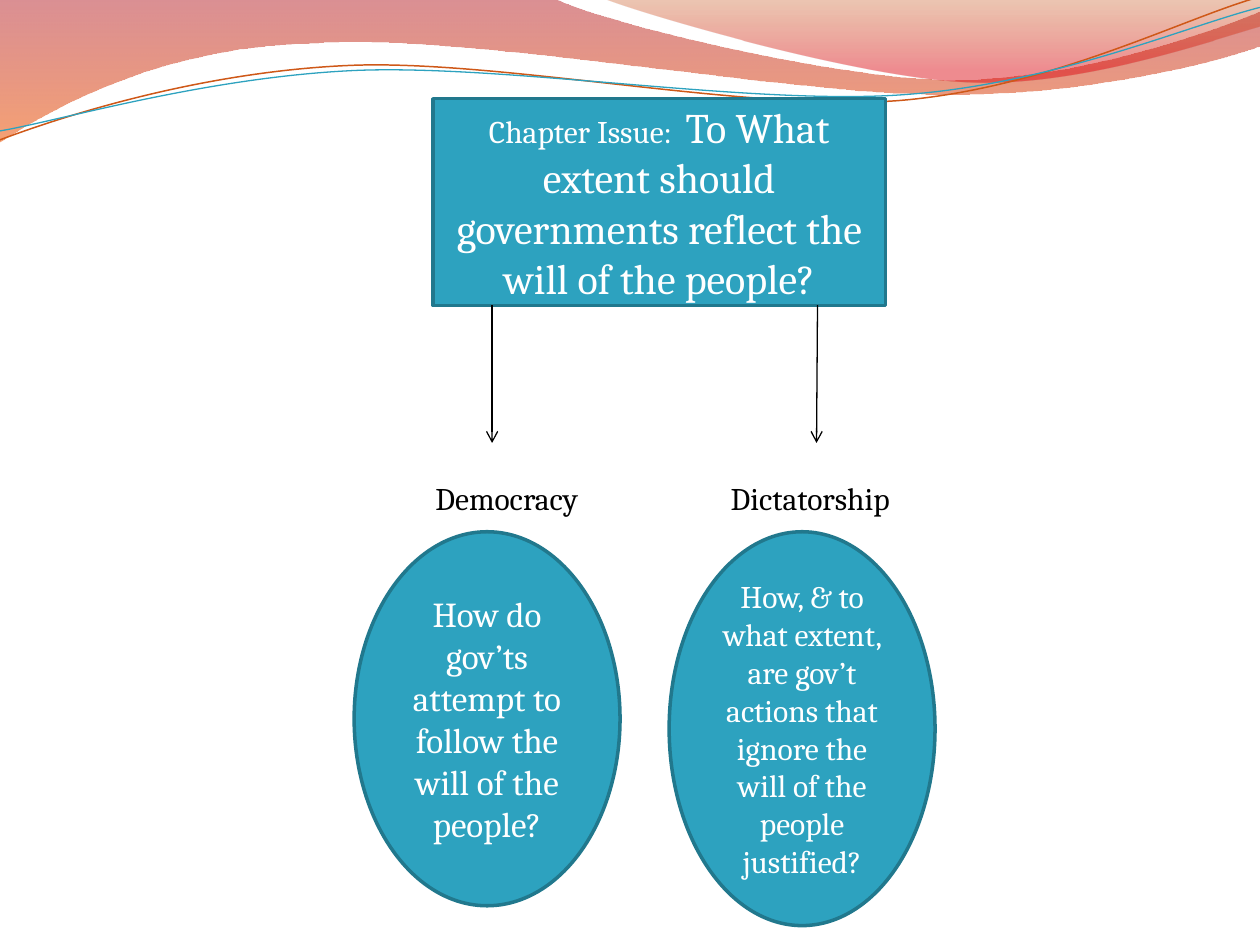
"""Build the chapter issue slide: one question that leads to democracy and dictatorship."""
from lxml import etree
from pptx import Presentation
from pptx import util as u
from pptx.dml.color import RGBColor
from pptx.enum import shapes, text
from pptx.oxml.ns import qn

rgb = RGBColor.from_string
TEAL, DARK_TEAL, WHITE, BLACK = "2DA2BF", "21788D", "FFFFFF", "000000"


def add_text(sp, *runs, color=WHITE, align=text.PP_ALIGN.CENTER, anchor=text.MSO_ANCHOR.MIDDLE):
    """Write (wording, size) runs as one paragraph of the shape."""
    tf = sp.text_frame
    tf.word_wrap = True
    tf.vertical_anchor = anchor
    p = tf.paragraphs[0]
    p.alignment = align
    for wording, size in runs:
        r = p.add_run()
        r.text = wording
        r.font.name = "Cambria"
        r.font.size = u.Pt(size)
        r.font.color.rgb = rgb(color)


def add_wave(s, start, pieces, close):
    """Draw an outline in cm: one point is a straight piece, three are a Bézier curve."""
    builder = s.shapes.build_freeform(u.Cm(start[0]), u.Cm(start[1]))
    builder.add_line_segments([(u.Cm(x), u.Cm(y)) for piece in pieces for x, y in piece], close=close)
    sp = builder.convert_to_shape()
    sp.shadow.inherit = False
    segments = iter(sp._element.xpath(".//a:path/a:lnTo"))
    for piece in pieces:
        first, *others = [next(segments) for _ in piece]
        if others:
            curve = etree.Element(qn("a:cubicBezTo"))
            first.addprevious(curve)
            for segment in (first, *others):
                curve.append(segment[0])
                segment.getparent().remove(segment)
    return sp


prs = Presentation()
prs.slide_width, prs.slide_height = u.Cm(25.4), u.Cm(19.05)
s = prs.slides.add_slide(prs.slide_layouts[6])

bands = [
    ((0, 0), [
        [(11.18, -0.03)],
        [(12.09, 0.43), (16.87, 1.6), (19.25, 1.6)],
        [(21.67, 1.6), (24.33, 0.66), (25.4, 0.23)],
        [(25.43, 0.91)],
        [(24.97, 1.12), (22.1, 1.93), (18.95, 1.9)],
        [(15.8, 1.9), (9.7, 0.71), (6.53, 0.86)],
        [(3.28, 0.91), (1.17, 2.11), (-0.03, 2.87)],
    ], [(0, "AF0911", 45), (1, "EE5300", 55)]),
    ((12.17, -0.03), [
        [(12.93, 0.28), (17.32, 1.57), (19.53, 1.65)],
        [(21.74, 1.75), (24.41, 0.81), (25.4, 0.53)],
        [(25.4, 0)],
    ], [(0, "C24400", 30), (0.8, "DC000B", 45)]),
]
for start, pieces, stops in bands:
    sp = add_wave(s, start, pieces, close=True)
    sp.line.fill.background()
    sp.fill.gradient()
    sp.fill.gradient_angle = 270
    for stop, (position, color, _) in zip(sp.fill.gradient_stops, stops):
        stop.position = position
        stop.color.rgb = rgb(color)
    for clr, (_, _, opacity) in zip(sp._element.xpath(".//a:gs/a:srgbClr"), stops):
        etree.SubElement(clr, qn("a:alpha"), val=str(opacity * 1000))

threads = [
    ((0, 2.82), [
        [(1.22, 2.36), (4.01, 1.45), (7.04, 1.32)],
        [(10.03, 1.19), (15.06, 2.26), (18.11, 2.03)],
        [(21.16, 1.78), (23.83, 0.38), (25.35, -0.05)],
    ], "CF5818", 0.85),
    ((0, 2.64), [
        [(1.19, 2.44), (4.17, 1.55), (7.19, 1.42)],
        [(10.24, 1.3), (15.16, 2.13), (18.21, 1.91)],
        [(21.23, 1.7), (23.9, 0.53), (25.4, 0.15)],
    ], TEAL, 0.75),
]
for start, pieces, color, width in threads:
    sp = add_wave(s, start, pieces, close=False)
    sp.fill.background()
    sp.line.color.rgb = rgb(color)
    sp.line.width = u.Pt(width)

RECT, OVAL = shapes.MSO_SHAPE.RECTANGLE, shapes.MSO_SHAPE.OVAL
questions = [
    (RECT, (8.73, 1.99, 9.12, 4.17), [
        ("Chapter Issue:  ", 18),
        ("To What extent should governments reflect the will of the people?", 24)]),
    (OVAL, (7.14, 10.72, 5.36, 7.54), [
        ("How do gov’ts attempt to follow the will of the people?", 20)]),
    (OVAL, (13.49, 10.72, 5.36, 7.94), [
        ("How, & to what extent, are gov’t actions that ignore the will of the people justified?", 18)]),
]
for kind, box, runs in questions:
    sp = s.shapes.add_shape(kind, *map(u.Cm, box))
    sp.shadow.inherit = False
    sp.fill.solid()
    sp.fill.fore_color.rgb = rgb(TEAL)
    sp.line.color.rgb = rgb(DARK_TEAL)
    sp.line.width = u.Pt(2)
    add_text(sp, *runs)

branches = [("Democracy", 9.92, 9.92, 8.53, 3.96), ("Dictatorship", 16.48, 16.46, 14.48, 4.17)]
for label, top_x, tip_x, left, width in branches:
    arrow = s.shapes.add_connector(
        shapes.MSO_CONNECTOR.STRAIGHT, u.Cm(top_x), u.Cm(6.15), u.Cm(tip_x), u.Cm(8.93))
    arrow.line.color.rgb = rgb(BLACK)
    arrow.line.width = u.Pt(0.75)
    etree.SubElement(arrow.line._get_or_add_ln(), qn("a:tailEnd"), type="arrow")
    etree.SubElement(arrow._element.spPr, qn("a:effectLst"))
    tb = s.shapes.add_textbox(u.Cm(left), u.Cm(9.53), u.Cm(width), u.Cm(1.02))
    add_text(tb, (label, 18), color=BLACK, align=text.PP_ALIGN.LEFT, anchor=text.MSO_ANCHOR.TOP)
    tb.text_frame.auto_size = text.MSO_AUTO_SIZE.SHAPE_TO_FIT_TEXT

prs.save("out.pptx")
